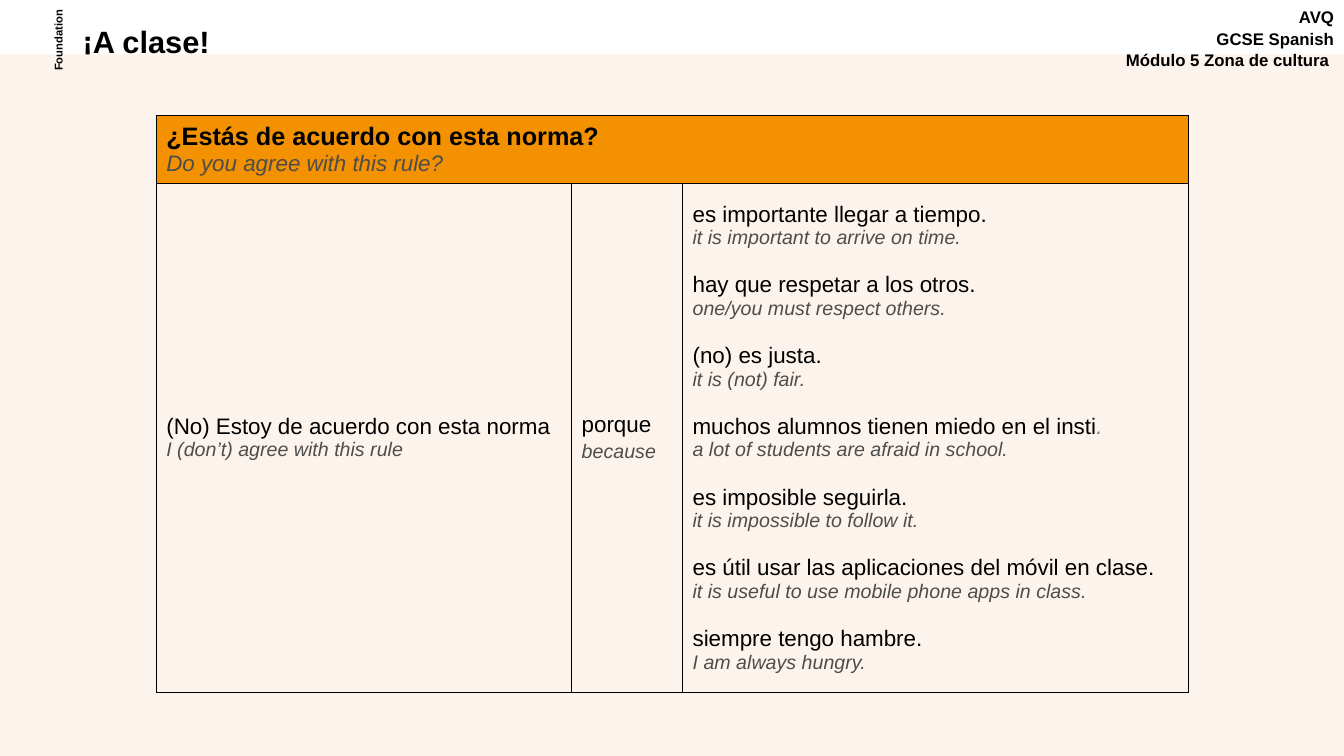
import pptx
import pptx.util
import pptx.dml.color
import pptx.enum.shapes
import pptx.enum.text
import pptx.oxml
import pptx.oxml.ns

Inches = pptx.util.Inches
Pt = pptx.util.Pt
ALIGN = pptx.enum.text.PP_ALIGN
MIDDLE = pptx.enum.text.MSO_ANCHOR.MIDDLE

BLACK, GREY = "000000", "4D4D4C"
SPANISH = {"size": Pt(16), "color": BLACK}
ENGLISH = {"size": Pt(14), "color": GREY, "italic": True}
REASON_GAP = 17

REASONS = [
    ("es importante llegar a tiempo.", "it is important to arrive on time."),
    ("hay que respetar a los otros.", "one/you must respect others."),
    ("(no) es justa.", "it is (not) fair."),
    ("muchos alumnos tienen miedo en el insti.", "a lot of students are afraid in school."),
    ("es imposible seguirla.", "it is impossible to follow it."),
    ("es útil usar las aplicaciones del móvil en clase.",
     "it is useful to use mobile phone apps in class."),
    ("siempre tengo hambre.", "I am always hungry."),
]


def rgb(value):
    return pptx.dml.color.RGBColor.from_string(value)


def apply_format(font, style):
    for name, value in {"name": "Arial", "bold": False, "italic": False, **style}.items():
        if name == "color":
            font.color.rgb = rgb(value)
        else:
            setattr(font, name, value)


def write_lines(frame, lines, align=ALIGN.LEFT, gap=0):
    for index, (text, style) in enumerate(lines):
        line = frame.paragraphs[0] if index == 0 else frame.add_paragraph()
        line.alignment = align
        line.space_before = Pt(gap if index else 0)
        run = line.add_run()
        run.text = text
        apply_format(run.font, style)
    return frame.paragraphs


def add_band(slide, color, left, top, width, height):
    band = slide.shapes.add_shape(pptx.enum.shapes.MSO_SHAPE.RECTANGLE,
                                  Inches(left), Inches(top), Inches(width), Inches(height))
    band.shadow.inherit = False
    band.fill.solid()
    band.fill.fore_color.rgb = rgb(color)
    band.line.fill.background()


def add_label(slide, lines, left, top, width, height, align, gap=0, rotation=0):
    label = slide.shapes.add_textbox(Inches(left), Inches(top), Inches(width), Inches(height))
    label.rotation = rotation
    label.text_frame.word_wrap = True
    write_lines(label.text_frame, lines, align, gap)


def set_title(slide, text, left, top, width, height):
    title = slide.shapes.title
    title.left, title.top = Inches(left), Inches(top)
    title.width, title.height = Inches(width), Inches(height)
    title.text_frame.auto_size = pptx.enum.text.MSO_AUTO_SIZE.NONE
    title.text_frame.vertical_anchor = MIDDLE
    write_lines(title.text_frame, [(text, {"size": Pt(22), "color": BLACK, "bold": True})])


def set_borders(cell):
    properties = cell._tc.get_or_add_tcPr()
    for side in ("lnL", "lnR", "lnT", "lnB"):
        properties.append(pptx.oxml.parse_xml(
            f'<a:{side} {pptx.oxml.ns.nsdecls("a")} w="{Pt(0.75)}">'
            f'<a:solidFill><a:srgbClr val="{BLACK}"/></a:solidFill></a:{side}>'))


def add_grid(slide, left, top, widths, heights):
    grid = slide.shapes.add_table(len(heights), len(widths), Inches(left), Inches(top),
                                  Inches(sum(widths)), Inches(sum(heights))).table
    grid.first_row = grid.horz_banding = False
    for column, width in zip(grid.columns, widths):
        column.width = Inches(width)
    for row, height in zip(grid.rows, heights):
        row.height = Inches(height)
    for cell in grid.iter_cells():
        set_borders(cell)
        cell.fill.background()
        cell.vertical_anchor = MIDDLE
    return grid


def fill_phrases(cell, phrases, gap=0):
    lines = [line for spanish, english in phrases
             for line in ((spanish, SPANISH), (english, ENGLISH))]
    paragraphs = write_lines(cell.text_frame, lines)
    for paragraph in paragraphs[2::2]:
        paragraph.space_before = Pt(gap)
    return paragraphs


def add_phrase_table(slide):
    grid = add_grid(slide, 1.55, 1.15, [4.12, 1.1, 5.02], [0.64, 5.05])
    question = grid.cell(0, 0)
    question.merge(grid.cell(0, 2))
    question.fill.solid()
    question.fill.fore_color.rgb = rgb("F39100")
    write_lines(question.text_frame, [
        ("¿Estás de acuerdo con esta norma?", {"size": Pt(18), "color": BLACK, "bold": True}),
        ("Do you agree with this rule?", {**ENGLISH, "size": Pt(16)}),
    ])
    fill_phrases(grid.cell(1, 0),
                 [("(No) Estoy de acuerdo con esta norma", "I (don’t) agree with this rule")])
    fill_phrases(grid.cell(1, 1), [("porque", "because")])[1].space_before = Pt(2)
    reasons = fill_phrases(grid.cell(1, 2), REASONS, REASON_GAP)
    afraid = reasons[6]
    afraid.runs[0].text = REASONS[3][0].removesuffix(".")
    stop = afraid.add_run()
    stop.text = "."
    apply_format(stop.font, {**SPANISH, "color": "808080", "italic": True})


def main():
    presentation = pptx.Presentation()
    presentation.slide_width, presentation.slide_height = Inches(13.33), Inches(7.5)
    slide = presentation.slides.add_slide(presentation.slide_layouts[5])
    add_band(slide, "FDF3ED", 0, 0.54, 13.33, 6.96)
    course_style = {"size": Pt(12), "color": BLACK, "bold": True}
    course = ["AVQ", "GCSE Spanish", "Módulo 5 Zona de cultura "]
    add_label(slide, [(text, course_style) for text in course],
              10.99, 0.02, 2.34, 0.77, ALIGN.RIGHT, gap=0.8)
    set_title(slide, "¡A clase!", 0.72, 0.19, 6.88, 0.43)
    add_label(slide, [("Foundation", {"size": Pt(8), "color": BLACK, "bold": True})],
              0.06, 0.29, 1.02, 0.22, ALIGN.CENTER, rotation=270)
    add_phrase_table(slide)
    presentation.save("out.pptx")


if __name__ == "__main__":
    main()
